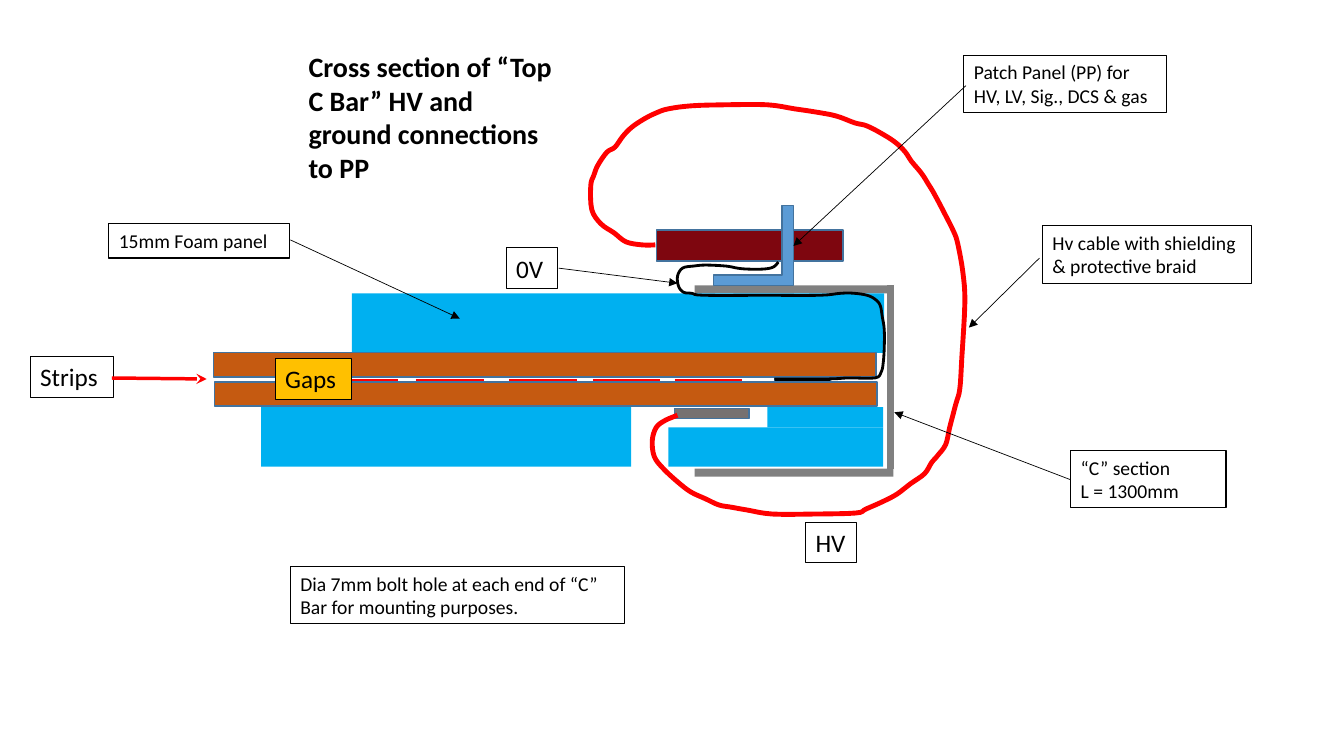
from dataclasses import dataclass

from lxml.etree import SubElement as Sub
from pptx import Presentation
from pptx.dml.color import RGBColor as RGB
from pptx.enum.shapes import MSO_CONNECTOR as Conn, MSO_SHAPE as Shape
from pptx.enum.text import MSO_ANCHOR as Anchor, MSO_AUTO_SIZE as AutoSize, PP_ALIGN as Align
from pptx.oxml.ns import qn
from pptx.util import Cm, Pt


@dataclass(frozen=True)
class Theme:
    font: str = "Calibri"
    title: int = 20
    label: int = 18
    note: int = 14
    black: str = "000000"
    white: str = "FFFFFF"
    red: str = "FF0000"
    foam: str = "00B0F0"
    copper: str = "C55A11"
    steel: str = "808080"
    pad: str = "767171"
    maroon: str = "7E060F"
    bracket: str = "5B9BD5"
    amber: str = "FFC000"
    edge: str = "43739E"


def inch(value):
    """Length in inches, given through Cm."""
    return Cm(value * 2.54)


def write(sp, text, size, font, color, bold=False, wrap=True):
    tf = sp.text_frame
    tf.word_wrap = wrap
    tf.auto_size = AutoSize.NONE
    tf.vertical_anchor = Anchor.TOP
    for i, line in enumerate(text.split("\n")):
        p = tf.add_paragraph() if i else tf.paragraphs[0]
        p.alignment = Align.LEFT
        r = p.add_run()
        r.text = line
        r.font.name, r.font.size, r.font.bold = font, Pt(size), bold
        r.font.color.rgb = RGB.from_string(color)


def smooth(points, steps=4):
    """Catmull-Rom curve through the points."""
    padded = [points[0], *points, points[-1]]
    curve = [points[0]]
    for a, b, c, d in zip(padded, padded[1:], padded[2:], padded[3:]):
        for k in range(1, steps + 1):
            t = k / steps
            curve.append(tuple(
                (2 * q + (r - p) * t + (2 * p - 5 * q + 4 * r - s) * t ** 2
                 + (3 * q - p - 3 * r + s) * t ** 3) / 2
                for p, q, r, s in zip(a, b, c, d)))
    return curve


class Drawing:
    def __init__(self, slide, theme):
        self.slide, self.theme = slide, theme
        self.shapes = slide.shapes

    def outline(self, sp, color, width):
        if color:
            sp.line.color.rgb = RGB.from_string(color)
            sp.line.width = Pt(width)
        else:
            sp.line.fill.background()

    def title(self, text, *box):
        sp = self.shapes.title
        sp.left, sp.top, sp.width, sp.height = map(inch, box)
        write(sp, text, self.theme.title, self.theme.font, self.theme.black, bold=True)

    def block(self, box, fill, line=None, kind=Shape.RECTANGLE):
        sp = self.shapes.add_shape(kind, *map(inch, box))
        sp.shadow.inherit = False
        sp.fill.solid()
        sp.fill.fore_color.rgb = RGB.from_string(fill)
        self.outline(sp, line, 1)
        return sp

    def label(self, text, box, size, fill=None):
        sp = self.shapes.add_textbox(*map(inch, box))
        if fill:
            sp.fill.solid()
            sp.fill.fore_color.rgb = RGB.from_string(fill)
        self.outline(sp, self.theme.black, 0.75)
        write(sp, text, size, self.theme.font, self.theme.black, wrap=box[2] > 1)

    def line(self, x1, y1, x2, y2, color, width, head=None):
        c = self.shapes.add_connector(Conn.STRAIGHT, *map(inch, (x1, y1, x2, y2)))
        self.outline(c, color, width)
        sp_pr = c._element.spPr
        if head:
            Sub(sp_pr.find(qn("a:ln")), qn("a:tailEnd"), type=head)
        Sub(sp_pr, qn("a:effectLst"))

    def cable(self, points, color, width):
        start, *rest = [tuple(map(inch, p)) for p in smooth(points)]
        builder = self.shapes.build_freeform(*start)
        builder.add_line_segments(rest, close=False)
        sp = builder.convert_to_shape()
        sp.shadow.inherit = False
        sp.fill.background()
        self.outline(sp, color, width)


HV_CABLE = [
    (6.72, 4.12), (6.6, 4.17), (6.51, 4.24), (6.47, 4.37), (6.49, 4.53), (6.58, 4.65),
    (6.72, 4.78), (6.85, 4.88), (7, 4.95), (7.13, 5.01), (7.24, 5.03), (7.41, 5.06),
    (7.66, 5.1), (8.07, 5.1), (8.49, 5.09), (8.59, 5.05), (8.77, 4.97), (8.9, 4.9),
    (9.03, 4.8), (9.17, 4.7), (9.24, 4.59), (9.3, 4.52), (9.38, 4.41), (9.42, 4.24),
    (9.48, 4.01), (9.52, 3.86), (9.54, 3.55), (9.57, 3), (9.55, 2.7), (9.5, 2.42),
    (9.46, 2.3), (9.37, 2.12), (9.27, 1.93), (9.21, 1.83), (9.14, 1.72), (9.04, 1.6),
    (8.98, 1.51), (8.89, 1.42), (8.77, 1.34), (8.6, 1.25), (8.48, 1.22), (8.29, 1.15),
    (8.08, 1.11), (7.88, 1.08), (7.61, 1.04), (7.2, 1.04), (6.86, 1.05), (6.63, 1.08),
    (6.51, 1.12), (6.39, 1.18), (6.27, 1.26), (6.18, 1.35), (6.1, 1.46), (6.02, 1.51),
    (5.93, 1.64), (5.89, 1.74), (5.86, 1.84), (5.87, 2.08), (5.96, 2.22), (6.09, 2.31),
    (6.21, 2.4), (6.37, 2.43), (6.5, 2.43)]

GROUND_WIRE = [
    (7.68, 3.76), (8.21, 3.76), (8.42, 3.75), (8.68, 3.75), (8.74, 3.69), (8.76, 3.6),
    (8.77, 3.45), (8.77, 3.27), (8.75, 3.14), (8.73, 3.03), (8.68, 2.97), (8.6, 2.93),
    (8.47, 2.91), (8.34, 2.91), (8.13, 2.93), (7.59, 2.93), (6.98, 2.93), (6.86, 2.91),
    (6.78, 2.9), (6.73, 2.84), (6.72, 2.74), (6.77, 2.66), (6.88, 2.64), (7, 2.63),
    (7.2, 2.64), (7.31, 2.66), (7.41, 2.67), (7.57, 2.67), (7.67, 2.65), (7.72, 2.6)]


def main():
    prs = Presentation()
    prs.slide_width, prs.slide_height = inch(13.33), inch(7.5)
    th = Theme()
    d = Drawing(prs.slides.add_slide(prs.slide_layouts[5]), th)

    d.title("Cross section of “Top C Bar” HV and ground connections to PP",
            2.96, 0.44, 2.71, 1.45)

    # Patch panel body and C section
    d.block((6.51, 2.28, 1.85, 0.31), th.maroon, th.edge)
    d.block((8.79, 2.82, 0.08, 1.84), th.steel, th.white)
    for y in (4.65, 2.83):
        d.block((6.89, y, 1.97, 0.08), th.steel)

    # Foam panels
    for box in ((2.59, 4.04, 3.67, 0.59), (6.63, 4.24, 2.13, 0.39),
                (7.61, 4.04, 1.15, 0.2), (3.49, 2.91, 5.28, 0.59)):
        d.block(box, th.foam)

    # HV pad, gap plates and ground contact
    d.block((6.69, 4.05, 0.74, 0.1), th.pad, th.edge)
    for x, y in ((2.13, 3.79), (2.12, 3.5)):
        d.block((x, y, 6.57, 0.24), th.copper, th.edge)
    d.block((7.68, 3.75, 0.56, 0.04), th.black, th.edge)

    # Readout strips between the plates
    for x in (3.28, 4.13, 5.05, 5.88, 6.69):
        d.line(x, 3.77, x + 0.67, 3.77, th.red, 1.5)

    # Patch panel bracket
    bracket = d.block((7.08, 2.04, 0.79, 0.79), th.bracket, th.edge, Shape.CORNER)
    bracket.adjustments[0], bracket.adjustments[1] = 0.129, 0.146
    bracket._element.spPr.find(qn("a:xfrm")).set("flipH", "1")

    # Cables
    d.cable(HV_CABLE, th.red, 3.5)
    d.cable(GROUND_WIRE, th.black, 2)

    # Labels
    for text, *box in (("Strips", 0.3, 3.54, 0.83, 0.4), ("HV", 7.99, 5.18, 0.51, 0.4),
                       ("0V", 5.02, 2.46, 0.51, 0.4)):
        d.label(text, box, th.label)
    d.label("Gaps", (2.73, 3.56, 0.76, 0.4), th.label, th.amber)
    for text, *box in (
            ("“C” section\nL = 1300mm", 10.62, 4.47, 1.54, 0.57),
            ("15mm Foam panel", 1.08, 2.22, 1.79, 0.34),
            ("Dia 7mm bolt hole at each end of “C” Bar for mounting purposes.",
             2.88, 5.62, 3.31, 0.57),
            ("Hv cable with shielding & protective braid", 10.34, 2.24, 2.07, 0.57),
            ("Patch Panel (PP) for HV, LV, Sig., DCS & gas", 9.56, 0.55, 2.01, 0.57)):
        d.label(text, box, th.note)

    # Pointers from labels to parts
    d.line(1.11, 3.75, 2.05, 3.76, th.red, 2.5, "stealth")
    for ends in ((5.54, 2.66, 6.72, 2.81), (2.88, 2.38, 4.56, 3.16),
                 (10.62, 4.76, 8.87, 4.09), (9.58, 0.85, 7.87, 2.44),
                 (10.31, 2.56, 9.61, 3.25)):
        d.line(*ends, th.black, 0.5, "triangle")

    prs.save("out.pptx")


if __name__ == "__main__":
    main()
